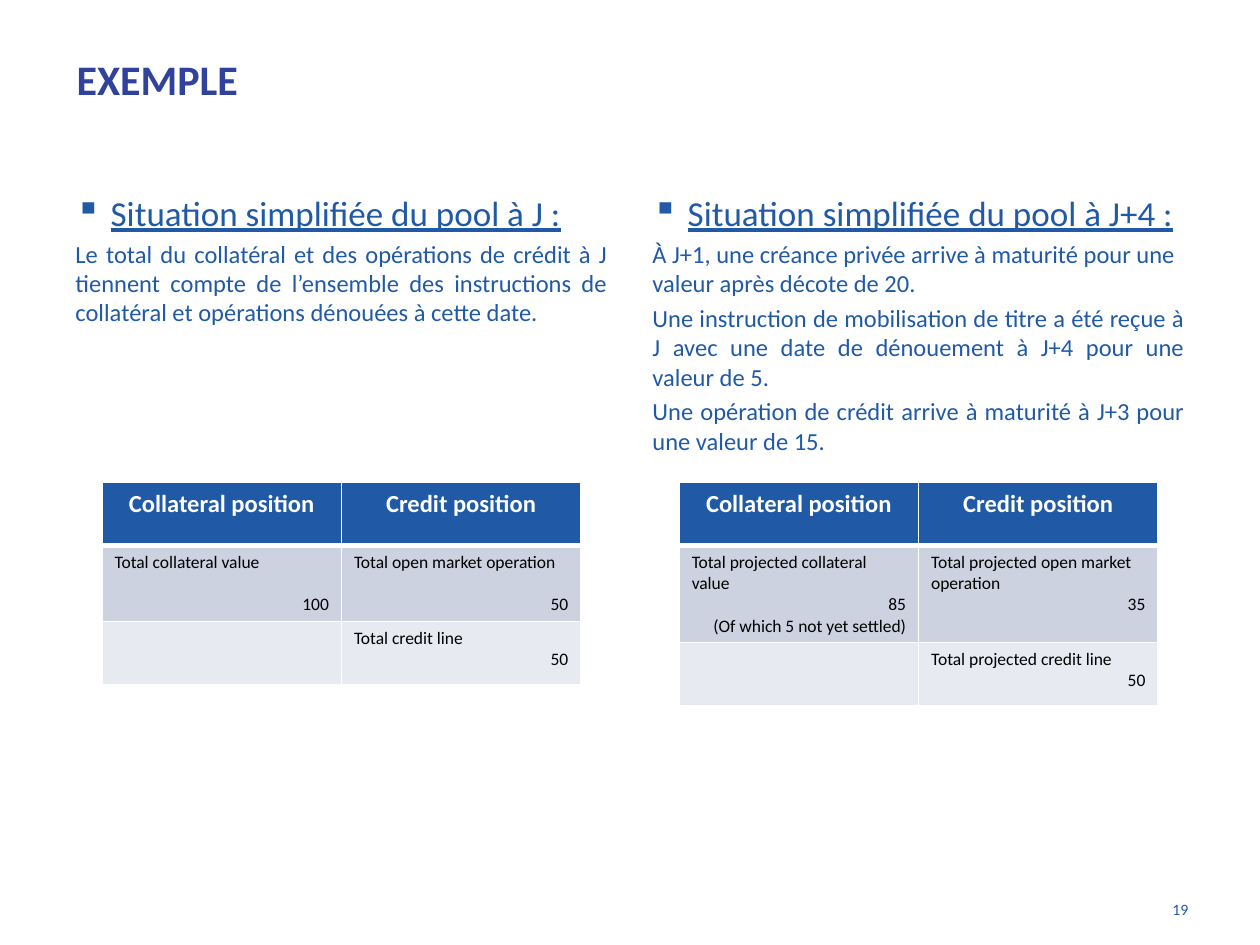
from dataclasses import dataclass

from lxml import etree
from pptx import Presentation
from pptx.dml.color import RGBColor
from pptx.enum import text
from pptx.oxml import ns
from pptx.util import Inches, Pt

LEFT, RIGHT = text.PP_ALIGN.LEFT, text.PP_ALIGN.RIGHT
CENTER, JUSTIFY = text.PP_ALIGN.CENTER, text.PP_ALIGN.JUSTIFY


@dataclass(frozen=True)
class Theme:
    """Font, colours and type sizes of the slide."""
    font: str = "Calibri"
    title: str = "31429C"
    blue: str = "205AA7"
    white: str = "FFFFFF"
    black: str = "000000"
    bands: tuple = ("205AA7", "CDD2E1", "E8EAF1")
    title_size: int = 24
    heading_size: int = 20
    body_size: int = 14
    cell_size: int = 10
    number_size: int = 9


THEME = Theme()


def add_run(p, words, size, color, bold=False, underline=False):
    """Add one styled run to a paragraph."""
    r = p.add_run()
    r.text = words
    r.font.name = THEME.font
    r.font.size = Pt(size)
    r.font.bold = bold
    r.font.underline = underline
    r.font.color.rgb = RGBColor.from_string(color)


def add_box(s, left, top, width, height, anchor=text.MSO_ANCHOR.TOP):
    """Add a wrapping text box and return its text frame."""
    sp = s.shapes.add_textbox(Inches(left), Inches(top), Inches(width), Inches(height))
    tf = sp.text_frame
    tf.word_wrap = True
    tf.vertical_anchor = anchor
    return tf


def add_bullet(p, mark, indent):
    """Give a paragraph a hanging bullet."""
    pPr = p._p.get_or_add_pPr()
    pPr.set("marL", str(Inches(indent)))
    pPr.set("indent", str(-Inches(indent)))
    etree.SubElement(pPr, ns.qn("a:buChar")).set("char", mark)


def add_column(s, left, heading, paragraphs):
    """Add a bulleted heading followed by aligned paragraphs."""
    tf = add_box(s, left, 1.47, 4.42, 5.23)
    p = tf.paragraphs[0]
    add_bullet(p, "▪", 0.28)
    add_run(p, heading, THEME.heading_size, THEME.blue, underline=True)
    for align, words in paragraphs:
        p = tf.add_paragraph()
        p.alignment = align
        p.space_before = Pt(3)
        add_run(p, words, THEME.body_size, THEME.blue)


def set_borders(cell, top, bottom):
    """Draw white borders around a cell, with widths in points."""
    widths = {"lnL": 1, "lnR": 1, "lnT": top, "lnB": bottom}
    tcPr = cell._tc.get_or_add_tcPr()
    for i, (side, width) in enumerate(widths.items()):
        ln = etree.Element(ns.qn(f"a:{side}"), w=str(Pt(width)))
        fill = etree.SubElement(ln, ns.qn("a:solidFill"))
        etree.SubElement(fill, ns.qn("a:srgbClr")).set("val", THEME.white)
        tcPr.insert(i, ln)


def fill_cell(cell, row, label, amounts, gap):
    """Write a header, or a label with right-aligned amounts below it."""
    p = cell.text_frame.paragraphs[0]
    if row == 0:
        p.alignment = CENTER
        add_run(p, label, THEME.body_size, THEME.white, bold=True)
        return
    p.alignment = LEFT
    add_run(p, label, THEME.cell_size, THEME.black)
    for i, amount in enumerate(amounts):
        p = cell.text_frame.add_paragraph()
        p.alignment = RIGHT
        if i == 0 and gap:
            p.space_before = Pt(gap)
        add_run(p, amount, THEME.cell_size, THEME.black)


def add_position_table(s, left, heights, rows, gap=0):
    """Add a table of positions; gap is the space over amounts in its first body row."""
    frame = s.shapes.add_table(len(rows), 2, Inches(left), Inches(3.83),
                               Inches(3.8), Inches(sum(heights)))
    table = frame.table
    for column in table.columns:
        column.width = Inches(1.9)
    for i, (height, row) in enumerate(zip(heights, rows)):
        table.rows[i].height = Inches(height)
        for j, content in enumerate(row):
            cell = table.cell(i, j)
            cell.fill.solid()
            cell.fill.fore_color.rgb = RGBColor.from_string(THEME.bands[i])
            set_borders(cell, top=3 if i == 1 else 1, bottom=3 if i == 0 else 1)
            if content:
                label, *amounts = content
                fill_cell(cell, i, label, amounts, gap if i == 1 else 0)


def main():
    """Build the slide and save it."""
    prs = Presentation()
    prs.slide_width, prs.slide_height = Inches(10), Inches(7.5)
    s = prs.slides.add_slide(prs.slide_layouts[6])

    tf = add_box(s, 0.51, 0, 9, 1.25, text.MSO_ANCHOR.MIDDLE)
    add_run(tf.paragraphs[0], "EXEMPLE", THEME.title_size, THEME.title, bold=True)

    add_column(s, 0.5, "Situation simplifiée du pool à J :", [
        (JUSTIFY, "Le total du collatéral et des opérations de crédit à J tiennent compte "
                  "de l’ensemble des instructions de collatéral et opérations dénouées "
                  "à cette date."),
    ])
    add_column(s, 5.08, "Situation simplifiée du pool à J+4 :", [
        (LEFT, "À J+1, une créance privée arrive à maturité pour une valeur après "
               "décote de 20."),
        (JUSTIFY, "Une instruction de mobilisation de titre a été reçue à J avec une date "
                  "de dénouement à J+4 pour une valeur de 5."),
        (JUSTIFY, "Une opération de crédit arrive à maturité à J+3 pour une valeur de 15."),
    ])

    header = [("Collateral position",), ("Credit position",)]
    add_position_table(s, 0.81, (0.5, 0.6, 0.5), [
        header,
        [("Total collateral value", "100"), ("Total open market operation", "50")],
        [None, ("Total credit line", "50")],
    ], gap=12)
    add_position_table(s, 5.39, (0.5, 0.76, 0.5), [
        header,
        [("Total projected collateral value", "85", "(Of which 5 not yet settled)"),
         ("Total projected open market operation", "35")],
        [None, ("Total projected credit line", "50")],
    ])

    p = add_box(s, 8.94, 7.09, 0.59, 0.39).paragraphs[0]
    p.alignment = RIGHT
    add_run(p, "19", THEME.number_size, THEME.blue)
    prs.save("out.pptx")


if __name__ == "__main__":
    main()
